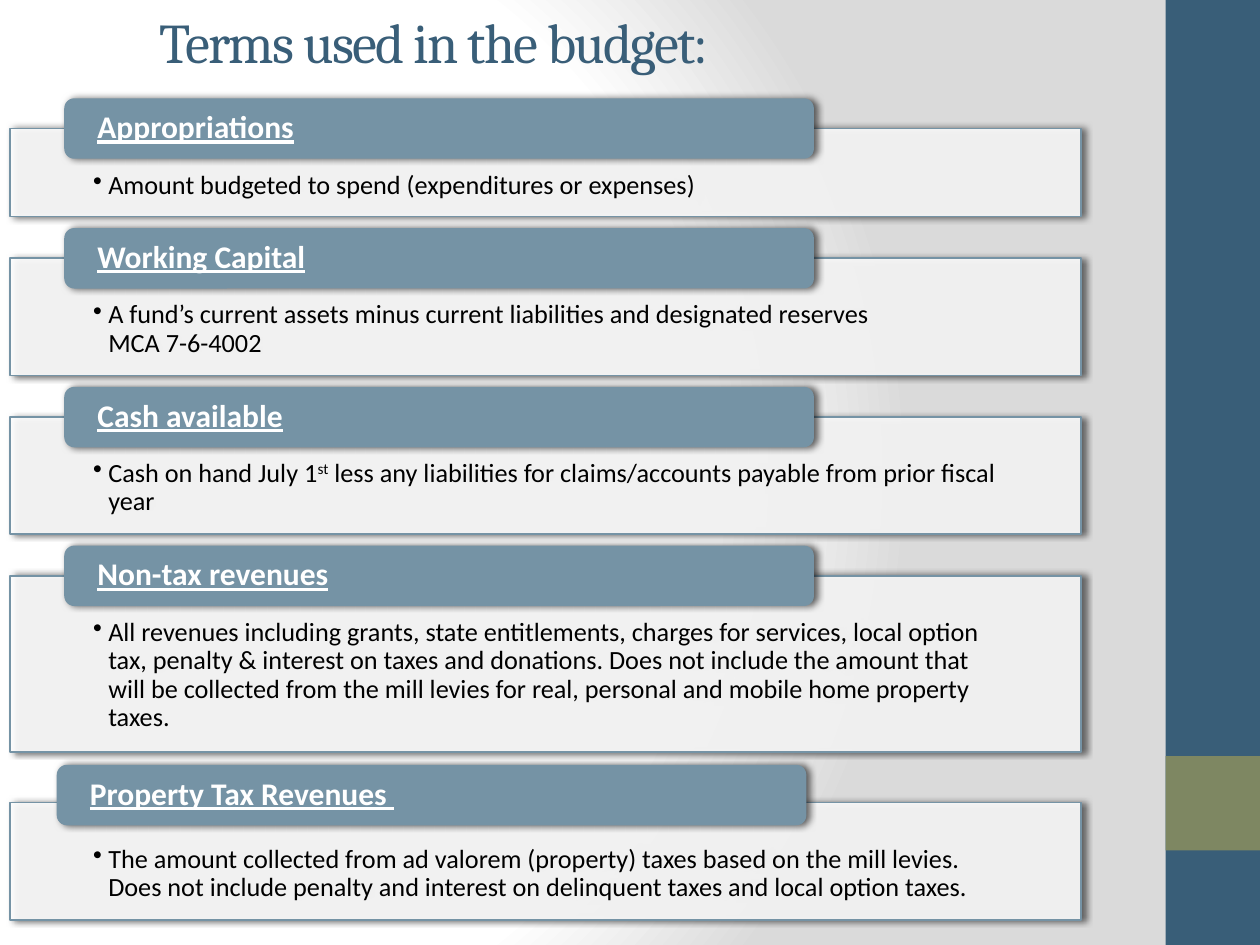
from lxml import etree
from pptx import Presentation
from pptx import util as u
from pptx.dml.color import RGBColor
from pptx.enum import shapes, text
from pptx.oxml import parse_xml
from pptx.oxml.ns import nsdecls, qn

HUES = {"navy": "395E78", "olive": "7E8762", "steel": "7593A5",
        "white": "FFFFFF", "black": "000000", "grey": "DADADA"}

# Heading, wording (| marks superscript, \v a line break), box height
TERMS = [
    ("Appropriations",
     "Amount budgeted to spend (expenditures or expenses)", 0.7),
    ("Working Capital",
     "A fund’s current assets minus current liabilities and designated "
     "reserves\vMCA 7-6-4002", 0.93),
    ("Cash available",
     "Cash on hand July 1|st| less any liabilities for claims/accounts "
     "payable from prior fiscal year", 0.93),
    ("Non-tax revenues",
     "All revenues including grants, state entitlements, charges for "
     "services, local option tax, penalty & interest on taxes and donations. "
     "Does not include the amount that will be collected from the mill "
     "levies for real, personal and mobile home property taxes.", 1.4),
    ("Property Tax Revenues ",
     "The amount collected from ad valorem (property) taxes based on the "
     "mill levies. Does not include penalty and interest on delinquent "
     "taxes and local option taxes.", 0.93),
]


def color(name):
    return RGBColor.from_string(HUES[name])


def child(node, tag, **attrs):
    return etree.SubElement(node, qn(tag), attrs)


class Page:
    font = "Calibri"

    def __init__(self, slide):
        self.slide = slide

    def backdrop(self):
        fill = self.slide.background.fill
        fill.solid()
        stops = "".join(
            f'<a:gs pos="{pos}000"><a:srgbClr val="{HUES[hue]}"/></a:gs>'
            for pos, hue in ((0, "white"), (75, "white"), (100, "grey")))
        grad = parse_xml(
            f'<a:gradFill {nsdecls("a")} rotWithShape="1">'
            f'<a:gsLst>{stops}</a:gsLst><a:path path="circle">'
            '<a:fillToRect l="20000" t="50000" r="100000" b="50000"/>'
            '</a:path></a:gradFill>')
        solid = next(self.slide.element.iter(qn("a:solidFill")))
        solid.getparent().replace(solid, grad)

    def block(self, kind, area, hue):
        box = self.slide.shapes.add_shape(kind, *map(u.Inches, area))
        box.shadow.inherit = False
        box.fill.solid()
        box.fill.fore_color.rgb = color(hue)
        box.line.fill.background()
        return box

    def shade(self, box):
        effects = box.element.spPr.find(qn("a:effectLst"))
        cast = child(effects, "a:outerShdw", blurRad="50800", dist="25400",
                     dir="0", rotWithShape="0")
        tint = child(cast, "a:srgbClr", val=HUES["black"])
        child(tint, "a:alpha", val="60000")

    def label(self, box, words, size, hue, inset, anchor):
        frame = box.text_frame
        frame.word_wrap = True
        frame.vertical_anchor = anchor
        (frame.margin_left, frame.margin_top,
         frame.margin_right, frame.margin_bottom) = map(u.Inches, inset)
        para = frame.paragraphs[0]
        para.text = words
        para.alignment = text.PP_ALIGN.LEFT
        self.style(para.runs, size, hue)
        return para

    def style(self, runs, size, hue):
        for run in runs:
            run.font.name = self.font
            run.font.size = u.Pt(size)
            run.font.color.rgb = color(hue)

    def title(self, words):
        area = map(u.Inches, (1.17, 0.08, 7.67, 0.5))
        box = self.slide.shapes.add_textbox(*area)
        para = self.label(box, words, 32, "navy", (0.1, 0.05, 0.1, 0.05),
                          text.MSO_ANCHOR.MIDDLE)
        run = para.runs[0]
        run.font.name = "Cambria"
        run._r.get_or_add_rPr().set("spc", "-100")

    def detail(self, words, top, high):
        box = self.block(shapes.MSO_SHAPE.RECTANGLE,
                         (0.08, top, 8.5, high), "white")
        tint = box.element.spPr.find(qn("a:solidFill"))[0]
        child(tint, "a:alpha", val="90000")
        box.line.color.rgb = color("steel")
        box.line.width = u.Pt(1)
        self.shade(box)
        first, *rest = words.split("|")
        para = self.label(box, first, 15, "black", (0.66, 0.34, 0.66, 0.12),
                          text.MSO_ANCHOR.TOP)
        for spot, part in enumerate(rest):
            run = para.add_run()
            run.text = part
            self.style([run], 15, "black")
            if spot % 2 == 0:
                run._r.get_or_add_rPr().set("baseline", "30000")
        para.line_spacing = 0.9
        props = para._p.get_or_add_pPr()
        props.set("marL", str(u.Inches(0.12)))
        props.set("indent", str(u.Inches(-0.12)))
        child(props, "a:buChar", char="•")

    def tab(self, words, left, top):
        box = self.block(shapes.MSO_SHAPE.ROUNDED_RECTANGLE,
                         (left, top, 5.95, 0.48), "steel")
        self.shade(box)
        para = self.label(box, words, 18, "white", (0.24, 0, 0.24, 0),
                          text.MSO_ANCHOR.MIDDLE)
        para.line_spacing = 0.9
        para.runs[0].font.bold = True
        para.runs[0].font.underline = True


def main():
    deck = Presentation()
    deck.slide_width, deck.slide_height = u.Inches(10), u.Inches(7.5)
    page = Page(deck.slides.add_slide(deck.slide_layouts[6]))

    # Background and side band
    page.backdrop()
    rect = shapes.MSO_SHAPE.RECTANGLE
    page.block(rect, (9.25, 0, 0.75, 7.5), "navy")
    page.block(rect, (9.25, 6, 0.75, 0.75), "olive")
    page.title("Terms used in the budget:")

    # Stacked terms; the last one sits slightly lower and its tab further left
    top = 1.02
    for head, words, high in TERMS:
        last = head == TERMS[-1][0]
        if last:
            top += 0.07
        page.detail(words, top, high)
        page.tab(head, 0.45 if last else 0.51, top - (0.3 if last else 0.24))
        top += high + 0.33

    deck.save("out.pptx")


if __name__ == "__main__":
    main()
